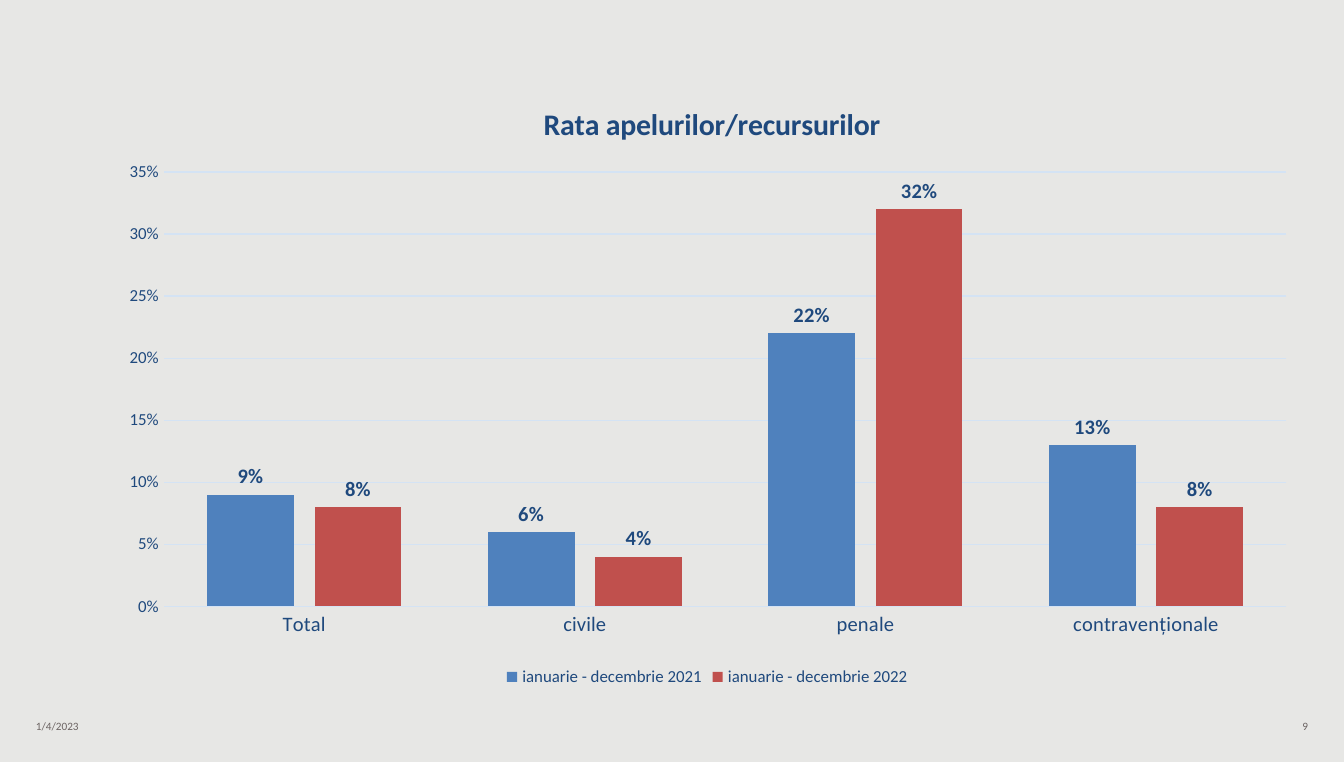
from lxml.etree import SubElement
from pptx import Presentation
from pptx.chart.data import CategoryChartData
from pptx.dml.color import RGBColor
from pptx.enum.chart import XL_CHART_TYPE, XL_LABEL_POSITION, XL_LEGEND_POSITION, XL_TICK_MARK
from pptx.enum.text import MSO_ANCHOR, PP_ALIGN
from pptx.oxml import parse_xml
from pptx.oxml.ns import nsdecls, qn
from pptx.util import Cm, Pt

# Content
FONT = "Calibri"
COLORS = {"background": "E7E7E5", "footer": "6C6463", "text": "1F497D", "grid": "D4E3F4"}
TITLE = "Rata apelurilor/recursurilor"
CATEGORIES = ["Total", "civile", "penale", "contravenționale"]
SERIES = [
    ("ianuarie - decembrie 2021", [0.09, 0.06, 0.22, 0.13], ["688FC5", "4A80C3", "3B72B3"]),
    ("ianuarie - decembrie 2022", [0.08, 0.04, 0.32, 0.08], ["C76967", "C64B47", "B63C39"]),
]
FOOTERS = [("1/4/2023", 0.43, PP_ALIGN.LEFT), ("9", 19.05, PP_ALIGN.RIGHT)]


def format_font(font, size, color, bold=False):
    font.name = FONT
    font.size = Pt(size)
    font.bold = bold
    font.color.rgb = RGBColor.from_string(COLORS[color])


def add_text(slide, text, left, top, width, height, size=6, color="footer",
             alignment=PP_ALIGN.LEFT):
    box = slide.shapes.add_textbox(Cm(left), Cm(top), Cm(width), Cm(height))
    frame = box.text_frame
    frame.word_wrap = True
    frame.vertical_anchor = MSO_ANCHOR.MIDDLE
    paragraph = frame.paragraphs[0]
    paragraph.alignment = alignment
    paragraph.space_after = Pt(6)
    run = paragraph.add_run()
    run.text = text
    format_font(run.font, size, color)


def format_line(line):
    line.color.rgb = RGBColor.from_string(COLORS["grid"])
    line.width = Pt(0.75)


def fill_gradient(series, colors):
    """Vertical gradient with evenly spaced stops."""
    step = 100000 // (len(colors) - 1)
    stops = "".join(f'<a:gs pos="{index * step}"><a:srgbClr val="{color}"/></a:gs>'
                    for index, color in enumerate(colors))
    properties = series.format._element if hasattr(series.format, "_element") else \
        series._element.get_or_add_spPr()
    properties.insert(0, parse_xml(
        f'<a:gradFill {nsdecls("a")} rotWithShape="1"><a:gsLst>{stops}</a:gsLst>'
        '<a:lin ang="5400000" scaled="0"/></a:gradFill>'))


def place(parent, position, **fractions):
    """Fix a chart part as fractions of the chart area."""
    for layout in parent.findall(qn("c:layout")):
        parent.remove(layout)
    layout = parse_xml(f'<c:layout {nsdecls("c")}><c:manualLayout/></c:layout>')
    for name, value in fractions.items():
        SubElement(layout[0], qn(f"c:{name}")).set("val", str(value))
    parent.insert(position, layout)


presentation = Presentation()
presentation.slide_width, presentation.slide_height = Cm(25.4), Cm(14.4)
slide = presentation.slides.add_slide(presentation.slide_layouts[6])
slide.background.fill.solid()
slide.background.fill.fore_color.rgb = RGBColor.from_string(COLORS["background"])

# Date and slide number
for text, left, alignment in FOOTERS:
    add_text(slide, text, left, 13.46, 5.92, 0.51, alignment=alignment)

# Column chart
data = CategoryChartData(number_format="0%")
data.categories = CATEGORIES
for name, values, _ in SERIES:
    data.add_series(name, values)
chart = slide.shapes.add_chart(XL_CHART_TYPE.COLUMN_CLUSTERED, Cm(1.96), Cm(1.52),
                               Cm(22.81), Cm(11.56), data).chart
format_font(chart.font, 10, "text")

# Chart title
chart.has_title = True
title_frame = chart.chart_title.text_frame
title_frame.text = TITLE
format_font(title_frame.paragraphs[0].runs[0].font, 16, "text", bold=True)
chart.chart_title.include_in_layout = False
place(chart.chart_title._element, 1, xMode="edge", yMode="edge", x=0.36, y=0.03)

# Legend
chart.has_legend = True
chart.legend.position = XL_LEGEND_POSITION.BOTTOM
chart.legend.include_in_layout = False
format_font(chart.legend.font, 9, "text")

# Axes
for axis, size in ((chart.category_axis, 11), (chart.value_axis, 9)):
    axis.major_tick_mark = axis.minor_tick_mark = XL_TICK_MARK.NONE
    format_font(axis.tick_labels.font, size, "text")
format_line(chart.category_axis.format.line)
value_axis = chart.value_axis
value_axis.minimum_scale, value_axis.maximum_scale, value_axis.major_unit = 0, 0.35, 0.05
value_axis.tick_labels.number_format = "0%"
value_axis.tick_labels.number_format_is_linked = False
value_axis.format.line.fill.background()
format_line(value_axis.major_gridlines.format.line)

# Columns and their labels
plot = chart.plots[0]
plot.gap_width, plot.overlap, plot.vary_by_categories = 100, -24, False
for series, (_, _, colors) in zip(plot.series, SERIES):
    fill_gradient(series, colors)
    labels = series.data_labels
    labels.show_value = True
    labels.number_format, labels.number_format_is_linked = "0%", False
    labels.position = XL_LABEL_POSITION.OUTSIDE_END
    format_font(labels.font, 11, "text", bold=True)
place(chart._chartSpace.chart.plotArea, 0, layoutTarget="inner", xMode="edge", yMode="edge",
      x=0.05, y=0.15, w=0.93, h=0.71)

presentation.save("out.pptx")
